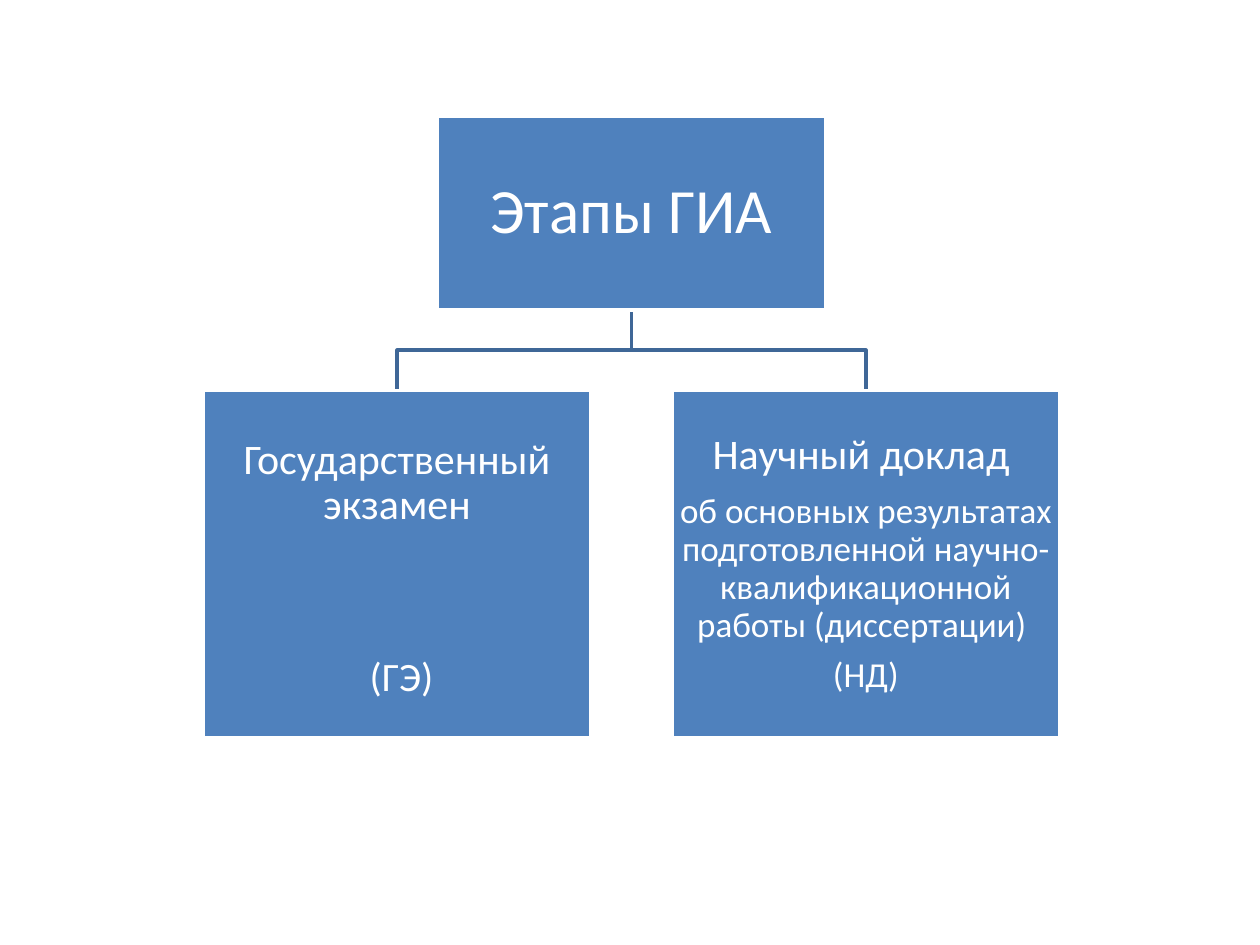
"""Build a slide with a two-branch chart of the final assessment stages."""
from pptx import Presentation
from pptx.dml.color import RGBColor
from pptx.enum.shapes import MSO_SHAPE
from pptx.enum.text import MSO_ANCHOR, PP_ALIGN
from pptx.util import Cm, Pt

RECTANGLE = MSO_SHAPE.RECTANGLE
MIDDLE = MSO_ANCHOR.MIDDLE
CENTER = PP_ALIGN.CENTER

BLUE = RGBColor(0x4F, 0x81, 0xBD)
DARK_BLUE = RGBColor(0x3F, 0x67, 0x97)
WHITE = RGBColor(0xFF, 0xFF, 0xFF)

FONT = "Calibri"
LINE_WIDTH = Pt(2)

CENTER_X = Cm(12.73)
BOX_WIDTH = Cm(7.82)
BRANCH_GAP = Cm(1.63)
ROOT_TOP = Cm(2.34)
ROOT_HEIGHT = Cm(3.91)
BRANCH_TOP = Cm(7.87)
BRANCH_HEIGHT = Cm(7)

ROOT_TEXT = [("Этапы ГИА", 36, 0)]
BRANCHES = [
    (-1, [("Государственный экзамен", 24, 73), (" (ГЭ)", 23, 0)], Cm(0), Cm(0.2)),
    (1, [
        ("Научный доклад ", 24, 8.4),
        ("об основных результатах подготовленной "
         "научно-квалификационной работы (диссертации) ", 20, 7),
        ("(НД)", 20, 0),
    ], Cm(0.05), Cm(0.05)),
]


def add_elbow(slide, branch_x):
    """Draw the bent line from the root box down to a branch box."""
    root_bottom = ROOT_TOP + ROOT_HEIGHT
    bend_y = (root_bottom + BRANCH_TOP) // 2
    builder = slide.shapes.build_freeform(CENTER_X, root_bottom)
    builder.add_line_segments(
        [(CENTER_X, bend_y), (branch_x, bend_y), (branch_x, BRANCH_TOP)], close=False
    )
    shape = builder.convert_to_shape()
    shape.shadow.inherit = False
    shape.fill.background()
    shape.line.color.rgb = DARK_BLUE
    shape.line.width = LINE_WIDTH


def write_paragraph(paragraph, text, size, space_after):
    """Fill one centred paragraph and format its text."""
    paragraph.text = text
    paragraph.alignment = CENTER
    paragraph.line_spacing = 0.9
    paragraph.space_after = Pt(space_after)
    for run in paragraph.runs:
        run.font.name = FONT
        run.font.size = Pt(size)
        run.font.color.rgb = WHITE


def add_box(slide, middle_x, top, height, lines, inset, top_inset):
    """Add a blue box centred on middle_x with its lines of text."""
    left = middle_x - BOX_WIDTH // 2
    shape = slide.shapes.add_shape(RECTANGLE, left, top, BOX_WIDTH, height)
    shape.shadow.inherit = False
    shape.fill.solid()
    shape.fill.fore_color.rgb = BLUE
    shape.line.color.rgb = WHITE
    shape.line.width = LINE_WIDTH
    text_frame = shape.text_frame
    text_frame.word_wrap = True
    text_frame.vertical_anchor = MIDDLE
    text_frame.margin_left = text_frame.margin_right = inset
    text_frame.margin_bottom = inset
    text_frame.margin_top = top_inset
    for index, line in enumerate(lines):
        paragraph = text_frame.add_paragraph() if index else text_frame.paragraphs[0]
        write_paragraph(paragraph, *line)


def main():
    """Build and save the presentation."""
    presentation = Presentation()
    presentation.slide_width = Cm(25.4)
    presentation.slide_height = Cm(19.05)
    slide = presentation.slides.add_slide(presentation.slide_layouts[6])

    branch_offset = (BOX_WIDTH + BRANCH_GAP) // 2
    for side, _, _, _ in reversed(BRANCHES):
        add_elbow(slide, CENTER_X + side * branch_offset)
    add_box(slide, CENTER_X, ROOT_TOP, ROOT_HEIGHT, ROOT_TEXT, Cm(0.08), Cm(0.08))
    for side, lines, inset, top_inset in BRANCHES:
        branch_x = CENTER_X + side * branch_offset
        add_box(slide, branch_x, BRANCH_TOP, BRANCH_HEIGHT, lines, inset, top_inset)

    presentation.save("out.pptx")


if __name__ == "__main__":
    main()
